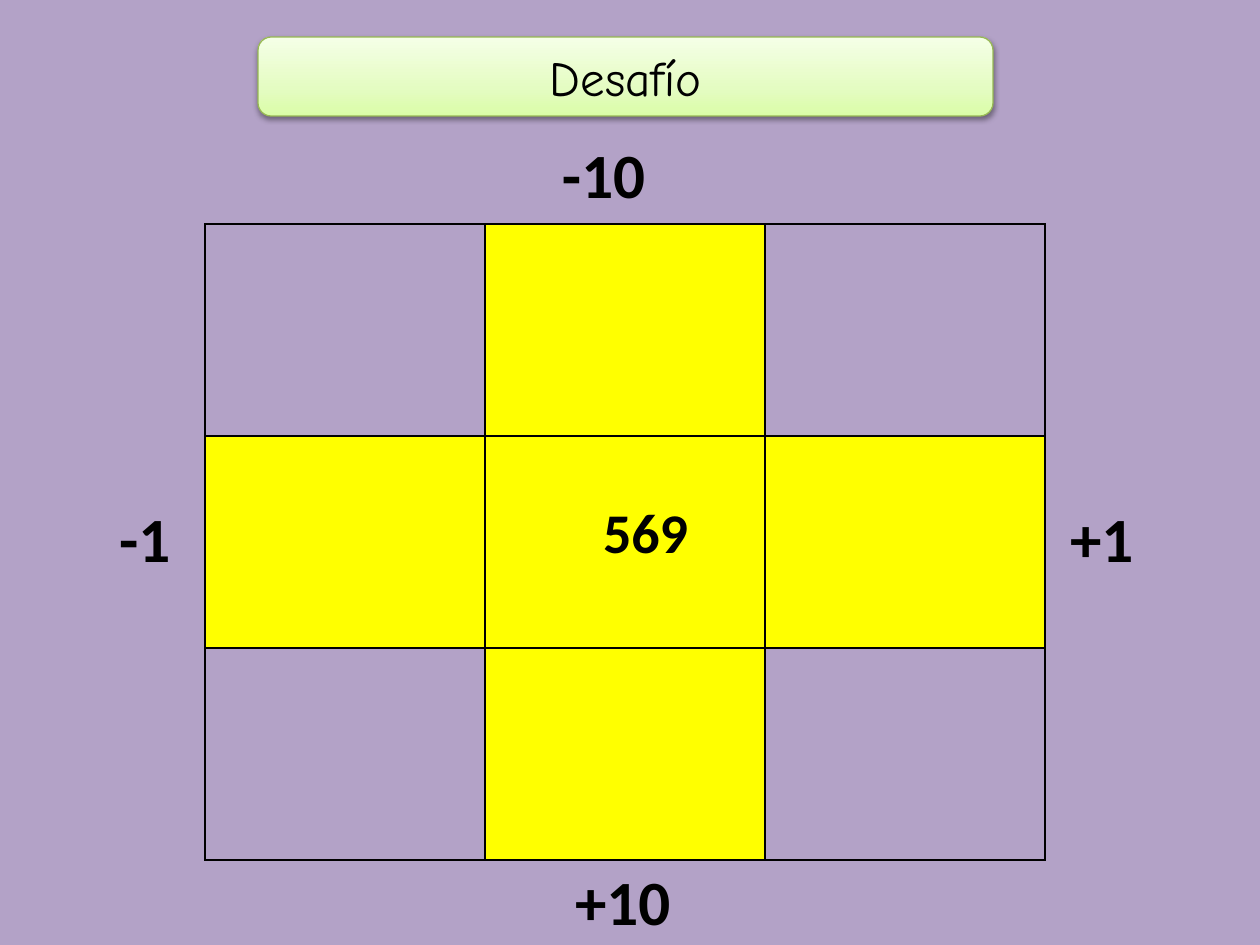
import pptx
import pptx.util
import pptx.dml.color
import pptx.enum.shapes
import pptx.enum.text
import pptx.oxml
import pptx.oxml.ns


class Theme:
    background = "B3A2C7"
    highlight = "FFFF00"
    ink = "000000"
    title_line = "98B955"
    title_stops = ((0, "DAFDA7"), (35, "E4FCC2"), (100, "F5FFE7"))
    title_font = "Comic Neue"
    body_font = "Calibri"
    title_size = 28
    label_size = 36
    number_size = 32


NAMESPACE = pptx.oxml.ns.nsdecls("a")
rgb = pptx.dml.color.RGBColor.from_string


def px(length):
    return pptx.util.Emu(round(length * 914400 / 126))


def add_run(paragraph, text, font_name, size, bold=False):
    run = paragraph.add_run()
    run.text = text
    run.font.name = font_name
    run.font.size = pptx.util.Pt(size)
    run.font.bold = bold
    run.font.color.rgb = rgb(Theme.ink)


presentation = pptx.Presentation()
presentation.slide_width = px(1260)
presentation.slide_height = px(945)
slide = presentation.slides.add_slide(presentation.slide_layouts[6])
slide.background.fill.solid()
slide.background.fill.fore_color.rgb = rgb(Theme.background)

# Title banner with a three-stop gradient and a soft shadow
title = slide.shapes.add_shape(
    pptx.enum.shapes.MSO_SHAPE.ROUNDED_RECTANGLE, px(258), px(37), px(735), px(79))
title.fill.gradient()
title.fill.gradient_angle = 90
properties = title.element.spPr
stop_list = properties.find(".//" + pptx.oxml.ns.qn("a:gsLst"))
for stop in list(stop_list):
    stop_list.remove(stop)
for position, color in Theme.title_stops:
    stop_list.append(pptx.oxml.parse_xml(
        f'<a:gs {NAMESPACE} pos="{position * 1000}"><a:srgbClr val="{color}"/></a:gs>'))
title.line.color.rgb = rgb(Theme.title_line)
title.line.width = pptx.util.Pt(0.75)
title.shadow.inherit = False
properties.find(pptx.oxml.ns.qn("a:effectLst")).append(pptx.oxml.parse_xml(
    f'<a:outerShdw {NAMESPACE} blurRad="40000" dist="20000" dir="5400000" rotWithShape="0">'
    f'<a:srgbClr val="{Theme.ink}"><a:alpha val="38000"/></a:srgbClr></a:outerShdw>'))
title.text_frame.vertical_anchor = pptx.enum.text.MSO_ANCHOR.MIDDLE
paragraph = title.text_frame.paragraphs[0]
paragraph.alignment = pptx.enum.text.PP_ALIGN.CENTER
add_run(paragraph, "Desafío", Theme.title_font, Theme.title_size)

# Number grid: the middle row and column form a highlighted cross
table = slide.shapes.add_table(3, 3, px(205), px(224), px(840), px(636)).table
table.first_row = False
table.horz_banding = False
for row in range(3):
    for column in range(3):
        cell = table.cell(row, column)
        cell_properties = cell._tc.get_or_add_tcPr()
        for side in ("lnL", "lnR", "lnT", "lnB"):
            cell_properties.append(pptx.oxml.parse_xml(
                f'<a:{side} {NAMESPACE} w="12700"><a:solidFill>'
                f'<a:srgbClr val="{Theme.ink}"/></a:solidFill></a:{side}>'))
        if 1 in (row, column):
            cell.fill.solid()
            cell.fill.fore_color.rgb = rgb(Theme.highlight)
        else:
            cell.fill.background()

# Step labels around the grid, and the number in its centre
labels = (
    ("+1", 1057, 493, 159, 89, 13, Theme.label_size),
    ("-1", 35, 493, 159, 89, 84, Theme.label_size),
    ("+10", 534, 856, 159, 89, 41, Theme.label_size),
    ("-10", 535, 129, 159, 89, 27, Theme.label_size),
    ("569", 590, 491, 205, 81, 13, Theme.number_size),
)
for text, left, top, width, height, inset, size in labels:
    label = slide.shapes.add_textbox(px(left), px(top), px(width), px(height))
    label.text_frame.word_wrap = True
    label.text_frame.auto_size = pptx.enum.text.MSO_AUTO_SIZE.SHAPE_TO_FIT_TEXT
    label.text_frame.margin_left = px(inset)
    add_run(label.text_frame.paragraphs[0], text, Theme.body_font, size, bold=True)

presentation.save("out.pptx")
